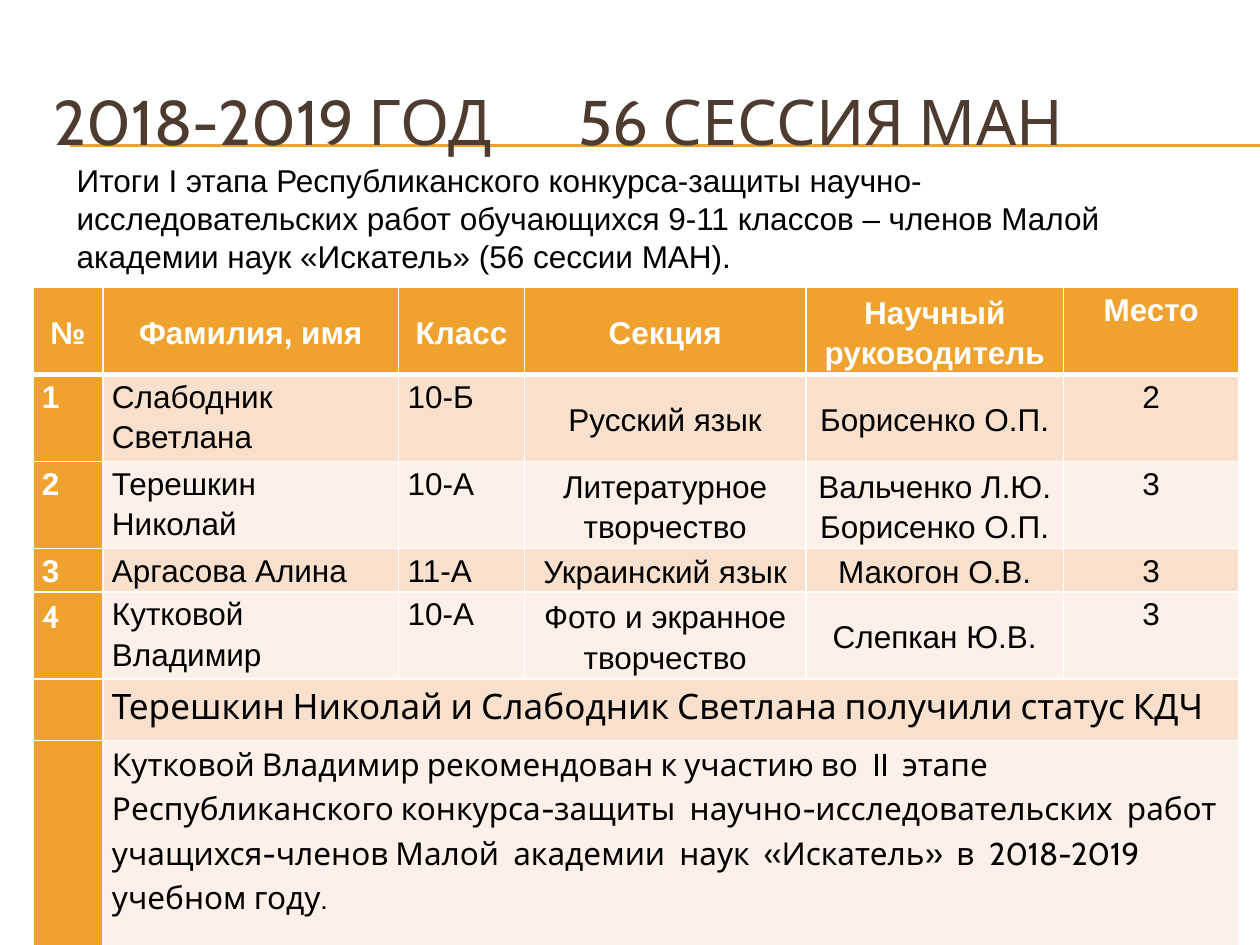
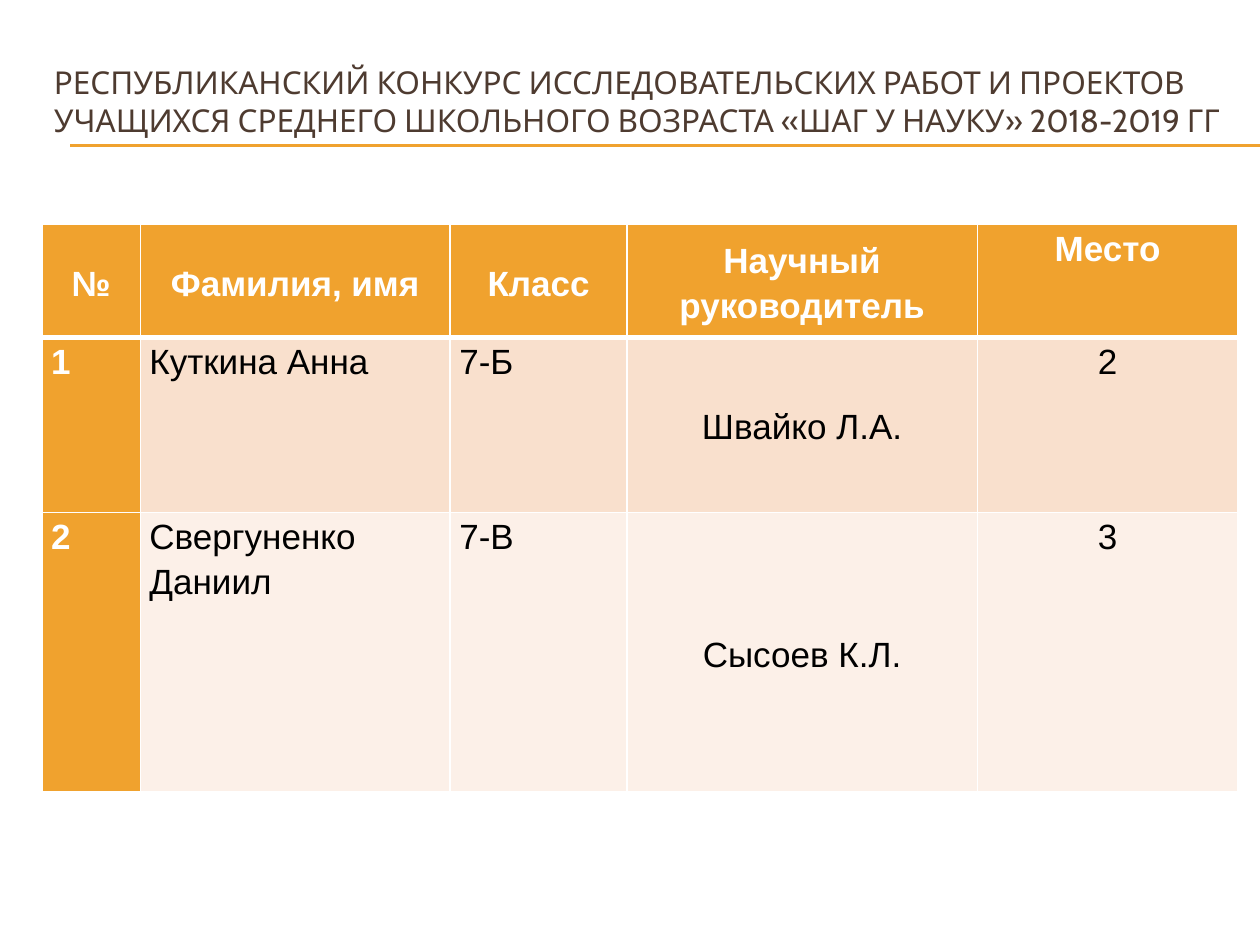
from lxml.etree import SubElement
from pptx import Presentation
from pptx.dml.color import RGBColor
from pptx.enum.shapes import MSO_CONNECTOR
from pptx.enum.text import MSO_ANCHOR, PP_ALIGN
from pptx.oxml.ns import qn
from pptx.util import Pt

ORANGE = RGBColor(0xF0, 0xA2, 0x2E)
PEACH = RGBColor(0xF9, 0xE0, 0xCD)
CREAM = RGBColor(0xFC, 0xF0, 0xE8)
BROWN = RGBColor(0x4E, 0x3B, 0x30)
WHITE = RGBColor(0xFF, 0xFF, 0xFF)
BLACK = RGBColor(0x00, 0x00, 0x00)

BODY_FONT = "Arial"
TITLE_FONT = "Cabin"
PAGE_WIDTH, PAGE_HEIGHT = 720, 540
TITLE_BOX = (23.76, 36, 684, 66)
RULE_LEFT = 40.3
RULE_TOPS = (82.8, 83.5)
TITLE_TAB = 300


def add_span(para, text, size, font, color, bold=False):
    """Add one formatted run to a paragraph."""
    span = para.add_run()
    span.text = text
    span.font.size = Pt(size)
    span.font.name = font
    span.font.color.rgb = color
    span.font.bold = bold


def add_text(page, box, text, size, font, color, anchor=MSO_ANCHOR.TOP):
    """Add a wrapping text box with one paragraph and return its frame."""
    frame = page.shapes.add_textbox(*map(Pt, box)).text_frame
    frame.word_wrap = True
    frame.vertical_anchor = anchor
    add_span(frame.paragraphs[0], text, size, font, color)
    return frame


def add_rules(page):
    """Draw the double orange rule that runs off the right edge."""
    for top in RULE_TOPS:
        rule = page.shapes.add_connector(
            MSO_CONNECTOR.STRAIGHT, Pt(RULE_LEFT), Pt(top), Pt(PAGE_WIDTH), Pt(top))
        rule.line.color.rgb = ORANGE
        rule.line.width = Pt(0.75)
        SubElement(rule._element.spPr, qn("a:effectLst"))


def add_titled_page(deck, title, size, anchor):
    """Add a blank page with the shared rules and title."""
    page = deck.slides.add_slide(deck.slide_layouts[6])
    add_rules(page)
    frame = add_text(page, TITLE_BOX, title, size, TITLE_FONT, BROWN, anchor)
    frame.margin_top = frame.margin_bottom = 0
    tabs = SubElement(frame.paragraphs[0]._p.get_or_add_pPr(), qn("a:tabLst"))
    SubElement(tabs, qn("a:tab"), pos=str(Pt(TITLE_TAB)), algn="l")
    return page


def add_borders(cell, row):
    """Edge a cell in white, with a thick line under the header row."""
    properties = cell._tc.get_or_add_tcPr()
    widths = {"L": 1, "R": 1, "T": 3 if row == 1 else 1, "B": 3 if row == 0 else 1}
    for side, width in widths.items():
        edge = SubElement(properties, qn(f"a:ln{side}"), w=str(Pt(width)))
        fill = SubElement(edge, qn("a:solidFill"))
        SubElement(fill, qn("a:srgbClr"), val=str(WHITE))


def style_cell(cell, row, column):
    """Set the borders, fill and insets of a cell."""
    add_borders(cell, row)
    cell.fill.solid()
    band = PEACH if row % 2 else CREAM
    cell.fill.fore_color.rgb = ORANGE if row == 0 or column == 0 else band
    cell.margin_left = cell.margin_right = Pt(5.2)
    cell.margin_top = cell.margin_bottom = 0


def fill_cell(cell, text, size, font, strong, centred=False):
    """Write the text of a cell, strong for headings and numbers."""
    para = cell.text_frame.paragraphs[0]
    para.line_spacing = 1.15
    para.alignment = PP_ALIGN.CENTER if centred else PP_ALIGN.LEFT
    add_span(para, text, size, font, WHITE if strong else BLACK, strong)


def add_results(page, left, top, widths, heights, records, size):
    """Add the results table; rows past the records stay empty."""
    table = page.shapes.add_table(
        len(heights), len(widths), Pt(left), Pt(top),
        Pt(sum(widths)), Pt(sum(heights))).table
    for column, width in zip(table.columns, widths):
        column.width = Pt(width)
    for row, height in zip(table.rows, heights):
        row.height = Pt(height)
    last = len(widths) - 1
    for row in range(len(heights)):
        for column in range(len(widths)):
            style_cell(table.cell(row, column), row, column)
    for row, record in enumerate(records):
        for column, text in enumerate(record):
            cell = table.cell(row, column)
            centred = row == 0 or column >= 3
            if centred and column < last:
                cell.vertical_anchor = MSO_ANCHOR.MIDDLE
            strong = row == 0 or column == 0
            fill_cell(cell, text, size, BODY_FONT, strong, centred)
    return table


def add_notes_rows(table, first_row, remarks):
    """Write remarks across all columns but the first."""
    last = len(table.columns) - 1
    for row, (text, size) in enumerate(remarks, first_row):
        cell = table.cell(row, 1)
        cell.merge(table.cell(row, last))
        fill_cell(cell, text, size, TITLE_FONT, False)


def build_session_page(deck):
    """Build the page with the results of the academy session."""
    page = add_titled_page(
        deck, "2018-2019 ГОД\t56 СЕССИЯ МАН", 36, MSO_ANCHOR.MIDDLE)
    records = [
        ("№", "Фамилия, имя", "Класс", "Секция", "Научный руководитель", "Место"),
        ("1", "Слабодник Светлана", "10-Б", "Русский язык", "Борисенко О.П.", "2"),
        ("2", "Терешкин Николай", "10-А", "Литературное творчество",
         "Вальченко Л.Ю. Борисенко О.П.", "3"),
        ("3", "Аргасова Алина", "11-А", "Украинский язык", "Макогон О.В.", "3"),
        ("4", "Кутковой Владимир", "10-А", "Фото и экранное творчество",
         "Слепкан Ю.В.", "3"),
    ]
    remarks = [
        ("Терешкин Николай и Слабодник Светлана получили статус КДЧ", 20),
        ("Кутковой Владимир рекомендован к участию во  II  этапе "
         "Республиканского конкурса-защиты  научно-исследовательских  работ  "
         "учащихся-членов Малой  академии  наук  «Искатель»  в  2018-2019  "
         "учебном году.", 18),
    ]
    table = add_results(
        page, 18.8, 164.3, (40, 169, 72, 160.7, 147.4, 100),
        (47.5, 47.5, 47.5, 23.8, 47.5, 35.2, 126), records, 18)
    table.cell(4, 0).text_frame.paragraphs[0].runs[0].font.name = TITLE_FONT
    add_notes_rows(table, len(records), remarks)
    add_text(
        page, (36.7, 88.6, 652, 72.7),
        "Итоги I этапа Республиканского конкурса-защиты научно-исследовательских "
        "работ обучающихся 9-11 классов – членов Малой академии наук «Искатель» "
        "(56 сессии МАН).", 18, BODY_FONT, BLACK)


def build_contest_page(deck):
    """Build the page with the results of the school contest."""
    page = add_titled_page(
        deck, "РЕСПУБЛИКАНСКИЙ КОНКУРС ИССЛЕДОВАТЕЛЬСКИХ РАБОТ И ПРОЕКТОВ "
        "УЧАЩИХСЯ СРЕДНЕГО ШКОЛЬНОГО ВОЗРАСТА «ШАГ У НАУКУ» 2018-2019 ГГ",
        18, MSO_ANCHOR.TOP)
    records = [
        ("№", "Фамилия, имя", "Класс", "Научный руководитель", "Место"),
        ("1", "Куткина Анна", "7-Б", "Швайко Л.А.", "2"),
        ("2", "Свергуненко Даниил", "7-В", "Сысоев К.Л.", "3"),
    ]
    add_results(
        page, 24, 128.2, (56.2, 177.1, 101, 200.2, 149), (64.6, 100, 159.6),
        records, 20)


def main():
    """Build and save the deck."""
    deck = Presentation()
    deck.slide_width, deck.slide_height = Pt(PAGE_WIDTH), Pt(PAGE_HEIGHT)
    build_session_page(deck)
    build_contest_page(deck)
    deck.save("out.pptx")


if __name__ == "__main__":
    main()
